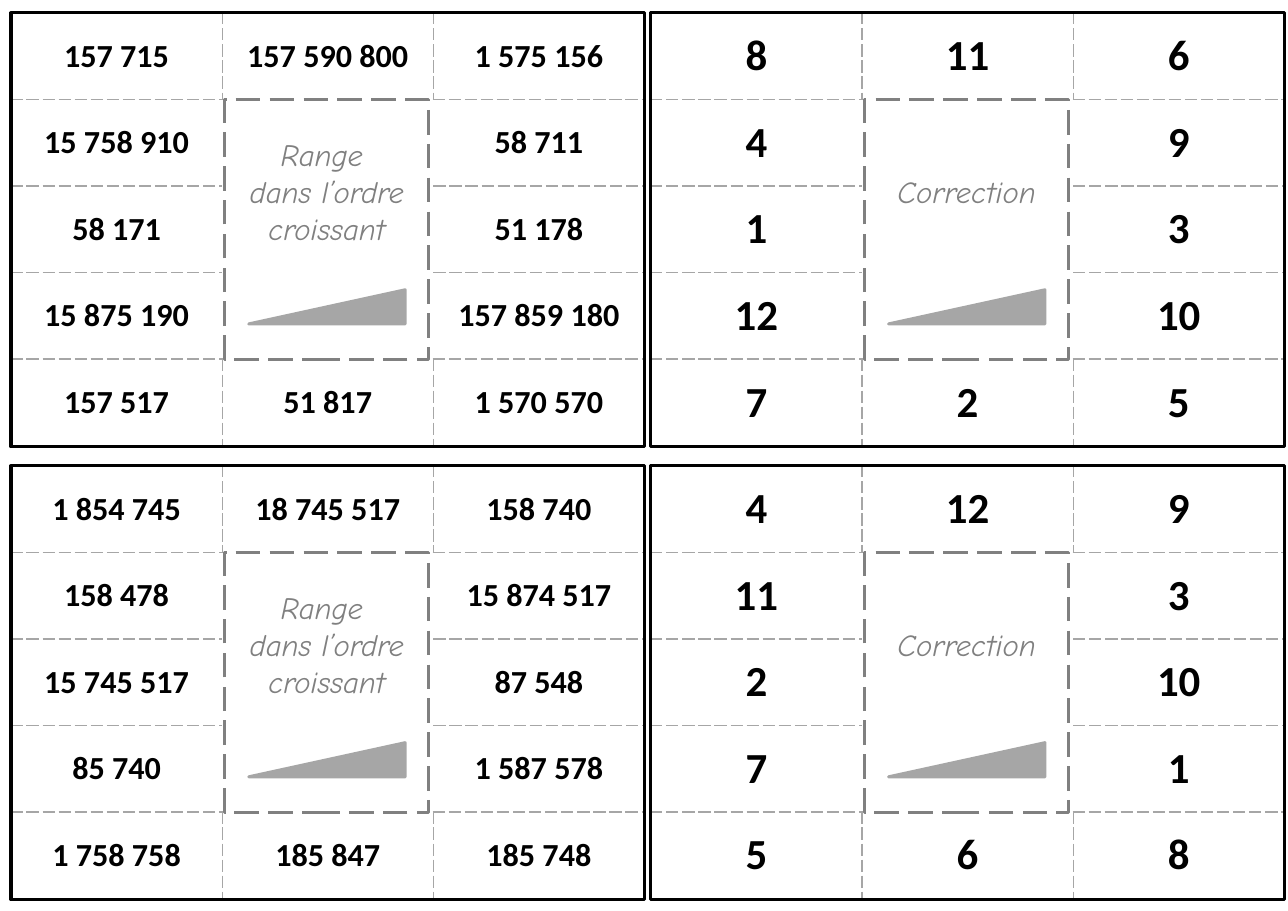
from lxml import etree
from pptx import Presentation
from pptx.dml.color import RGBColor
from pptx.enum.dml import MSO_LINE
from pptx.enum.shapes import MSO_SHAPE
from pptx.enum.text import MSO_ANCHOR, PP_ALIGN
from pptx.oxml import parse_xml
from pptx.oxml.ns import nsdecls, qn
from pptx.util import Pt

RECT, TRIANGLE = MSO_SHAPE.RECTANGLE, MSO_SHAPE.RIGHT_TRIANGLE
LONG_DASH = MSO_LINE.LONG_DASH
MIDDLE, CENTER = MSO_ANCHOR.MIDDLE, PP_ALIGN.CENTER
NO_STYLE = "{2D5ABB26-0587-4C30-8999-92F81FD0307C}"

BLACK, GREY, LIGHT, WHITE = "000000", "808080", "A6A6A6", "FFFFFF"
LEFT, RIGHT = 7.2, 425.3
TOP, BOTTOM = 8.4, 304.4
COL_W, ROW_H = 138, 56.6
ORDER = ["Range ", "dans l’ordre", "croissant"]
CORRECTION = ["Correction"]

# left, top, number size, centre text, rows of numbers
CARDS = [
    (LEFT, TOP, 21, ORDER, [
        ["157 715", "157 590 800", "1 575 156"],
        ["15 758 910", "", "58 711"],
        ["58 171", "", "51 178"],
        ["15 875 190", "", "157 859 180"],
        ["157 517", "51 817", "1 570 570"]]),
    (RIGHT, TOP, 28, CORRECTION, [
        ["8", "11", "6"],
        ["4", "", "9"],
        ["1", "", "3"],
        ["12", "", "10"],
        ["7", "2", "5"]]),
    (LEFT, BOTTOM, 21, ORDER, [
        ["1 854 745", "18 745 517", "158 740"],
        ["158 478", "", "15 874 517"],
        ["15 745 517", "", "87 548"],
        ["85 740", "", "1 587 578"],
        ["1 758 758", "185 847", "185 748"]]),
    (RIGHT, BOTTOM, 28, CORRECTION, [
        ["4", "12", "9"],
        ["11", "", "3"],
        ["2", "", "10"],
        ["7", "", "1"],
        ["5", "6", "8"]]),
]


def set_text(tf, lines, size, font, color, bold=False, italic=False):
    for i, line in enumerate(lines):
        p = tf.add_paragraph() if i else tf.paragraphs[0]
        p.alignment = CENTER
        r = p.add_run()
        r.text = line
        r.font.size, r.font.name = Pt(size), font
        r.font.bold, r.font.italic = bold, italic
        r.font.color.rgb = RGBColor.from_string(color)


def add_outline(kind, x, y, w, h, color, fill=None):
    sp = s.shapes.add_shape(kind, Pt(x), Pt(y), Pt(w), Pt(h))
    sp.shadow.inherit = False
    if fill:
        sp.fill.solid()
        sp.fill.fore_color.rgb = RGBColor.from_string(fill)
    else:
        sp.fill.background()
    sp.line.color.rgb = RGBColor.from_string(color)
    sp.line.width = Pt(2)
    return sp


prs = Presentation()
prs.slide_width, prs.slide_height = Pt(841.7), Pt(595.4)
s = prs.slides.add_slide(prs.slide_layouts[6])

for left, top, size, centre_lines, rows in CARDS:
    frame = s.shapes.add_table(5, 3, Pt(left), Pt(top), Pt(3 * COL_W), Pt(5 * ROW_H))
    table = frame.table
    frame._element.find(".//" + qn("a:tableStyleId")).text = NO_STYLE
    table.first_row = table.horz_banding = False
    for col in table.columns:
        col.width = Pt(COL_W)
    for i, row in enumerate(rows):
        table.rows[i].height = Pt(ROW_H)
        for j, number in enumerate(row):
            cell = table.cell(i, j)
            cell.vertical_anchor = MIDDLE
            if number:
                set_text(cell.text_frame, [number], size, "Calibri", BLACK, bold=True)
                # The sides that face the empty centre stay open
                sides = {"L": (i, j - 1), "R": (i, j + 1), "T": (i - 1, j), "B": (i + 1, j)}
                for side, (ni, nj) in sides.items():
                    if nj == 1 and 1 <= ni <= 3:
                        continue
                    cell._tc.get_or_add_tcPr().append(parse_xml(
                        f'<a:ln{side} {nsdecls("a")} w="{Pt(1)}"><a:solidFill>'
                        f'<a:srgbClr val="{LIGHT}"/></a:solidFill>'
                        f'<a:prstDash val="lgDash"/></a:ln{side}>'))
            cell.fill.solid()
            cell.fill.fore_color.rgb = RGBColor.from_string(WHITE)

    add_outline(RECT, left, top, 3 * COL_W, 283.7, BLACK)

    box = add_outline(RECT, left + 139.8, top + 56.8, 133.2, 169.9, GREY)
    box.line.dash_style = LONG_DASH
    tf = box.text_frame
    tf.word_wrap = True
    tf.vertical_anchor = MIDDLE
    tf.margin_bottom = Pt(54)
    set_text(tf, centre_lines, 20, "Comic Neue", GREY, italic=True)

    ramp = add_outline(TRIANGLE, left + 155.4, top + 181, 102.2, 22.3, LIGHT, fill=LIGHT)
    ramp._element.spPr.find(qn("a:xfrm")).set("flipH", "1")

prs.save("out.pptx")
